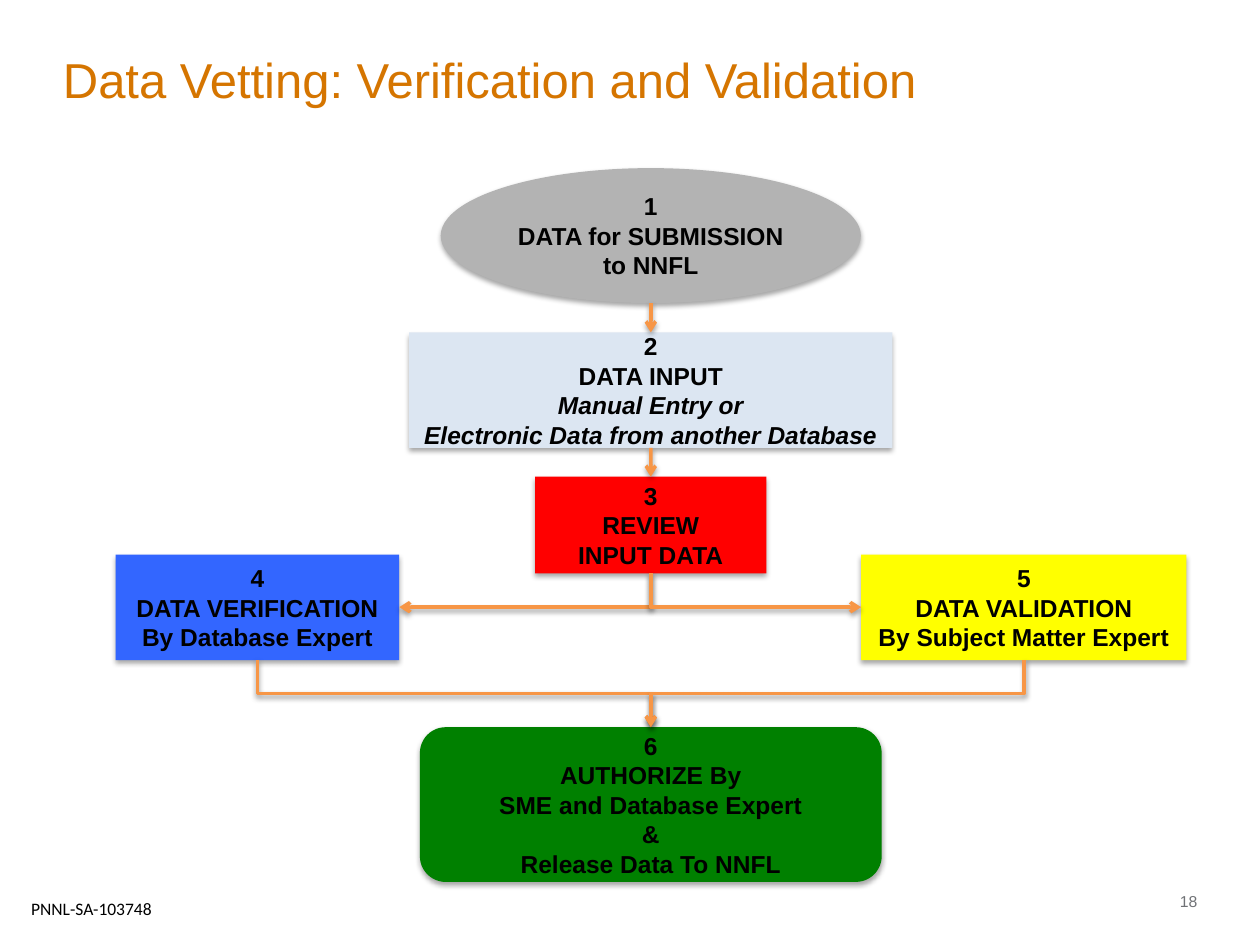
from lxml.etree import SubElement
from pptx import Presentation
from pptx.dml.color import RGBColor
from pptx.enum.shapes import MSO_CONNECTOR, MSO_SHAPE
from pptx.enum.text import MSO_ANCHOR, PP_ALIGN
from pptx.oxml.ns import qn
from pptx.util import Cm, Pt

AXIS = 13.12  # centre of the main column, in cm
TOP, LEFT, BOTTOM, RIGHT = range(4)


def color(hex_string):
    return RGBColor.from_string(hex_string)


def style_font(font, size, hex_string, name="Arial", bold=False, italic=False):
    font.name, font.size = name, Pt(size)
    font.bold, font.italic = bold, italic
    font.color.rgb = color(hex_string)


def add_shadow(shape, distance, opacity):
    properties = shape.element.spPr
    effects = properties.find(qn("a:effectLst"))
    if effects is None:
        effects = SubElement(properties, qn("a:effectLst"))
    shadow = SubElement(effects, qn("a:outerShdw"), blurRad=str(Pt(3.1)),
                        dist=str(Pt(distance)), dir="5400000", rotWithShape="0")
    black = SubElement(shadow, qn("a:srgbClr"), val="000000")
    SubElement(black, qn("a:alpha"), val=str(opacity * 1000))


def add_label(slide, text, left, top, width, height, size, hex_string,
              name="Arial", align=PP_ALIGN.LEFT, anchor=MSO_ANCHOR.TOP):
    shape = slide.shapes.add_textbox(Cm(left), Cm(top), Cm(width), Cm(height))
    frame = shape.text_frame
    frame.word_wrap = True
    frame.vertical_anchor = anchor
    frame.margin_left = frame.margin_right = 0
    frame.margin_top = frame.margin_bottom = 0
    paragraph = frame.paragraphs[0]
    paragraph.text = text
    paragraph.alignment = align
    style_font(paragraph.font, size, hex_string, name)


def add_step(slide, kind, center, top, width, height, fill, lines, italic_from=9):
    shape = slide.shapes.add_shape(kind, Cm(center - width / 2), Cm(top),
                                   Cm(width), Cm(height))
    shape.fill.solid()
    shape.fill.fore_color.rgb = color(fill)
    shape.line.fill.background()
    shape.shadow.inherit = False
    add_shadow(shape, 1.8, 35)
    frame = shape.text_frame
    frame.word_wrap = True
    frame.vertical_anchor = MSO_ANCHOR.MIDDLE
    for index, line in enumerate(lines):
        paragraph = frame.add_paragraph() if index else frame.paragraphs[0]
        paragraph.text = line
        paragraph.alignment = PP_ALIGN.CENTER
        style_font(paragraph.font, 14, "000000", bold=True, italic=index >= italic_from)
    return shape


def style_arrow(connector):
    connector.line.color.rgb = color("F79646")
    connector.line.width = Pt(2)
    line = connector.element.spPr.find(qn("a:ln"))
    SubElement(line, qn("a:tailEnd"), type="arrow")
    add_shadow(connector, 1.6, 38)


def add_straight_arrow(slide, x, start_y, end_y):
    connector = slide.shapes.add_connector(MSO_CONNECTOR.STRAIGHT, Cm(x), Cm(start_y),
                                           Cm(x), Cm(end_y))
    style_arrow(connector)
    return connector


def add_bent_arrow(slide, start, end, preset):
    """Leave start downwards: an elbow box turned a quarter about its middle."""
    (start_x, start_y), (end_x, end_y) = start, end
    middle_x, middle_y = (start_x + end_x) / 2, (start_y + end_y) / 2
    half_width, half_height = (end_y - start_y) / 2, abs(end_x - start_x) / 2
    rightward = end_x > start_x
    side = 1 if rightward else -1
    connector = slide.shapes.add_connector(
        MSO_CONNECTOR.ELBOW,
        Cm(middle_x + side * half_width), Cm(middle_y - half_height),
        Cm(middle_x - side * half_width), Cm(middle_y + half_height))
    properties = connector.element.spPr
    properties.find(qn("a:xfrm")).set("rot", "16200000" if rightward else "5400000")
    properties.find(qn("a:prstGeom")).set("prst", preset)
    style_arrow(connector)


def main():
    presentation = Presentation()
    presentation.slide_width, presentation.slide_height = Cm(25.4), Cm(19.05)
    slide = presentation.slides.add_slide(presentation.slide_layouts[6])

    # Title
    add_label(slide, "Data Vetting: Verification and Validation",
              1.27, 0.99, 18.42, 1.19, 28, "D57500")

    # Steps
    add_step(slide, MSO_SHAPE.OVAL, AXIS, 3.39, 8.47, 2.72, "B3B3B3",
             ["1", "DATA for SUBMISSION to NNFL"])
    data_input = add_step(slide, MSO_SHAPE.RECTANGLE, AXIS, 6.7, 9.74, 2.33, "DCE6F2",
                          ["2", "DATA INPUT", "Manual Entry or",
                           "Electronic Data from another Database"], italic_from=2)
    add_step(slide, MSO_SHAPE.ROUNDED_RECTANGLE, AXIS, 14.66, 9.31, 3.12, "008000",
             ["6", "AUTHORIZE By", "SME and Database Expert", "&",
              "Release Data To NNFL"])
    review = add_step(slide, MSO_SHAPE.RECTANGLE, AXIS, 9.61, 4.66, 1.95, "FF0000",
                      ["3", "REVIEW", "INPUT DATA"])
    add_step(slide, MSO_SHAPE.RECTANGLE, 20.64, 11.18, 6.56, 2.13, "FFFF00",
             ["5", "DATA VALIDATION", "By Subject Matter Expert"])
    add_step(slide, MSO_SHAPE.RECTANGLE, 5.19, 11.18, 5.72, 2.13, "3366FF",
             ["4", "DATA VERIFICATION", "By Database Expert"])

    # Straight arrows down the main column
    add_straight_arrow(slide, AXIS, 6.11, 6.7).end_connect(data_input, TOP)
    arrow = add_straight_arrow(slide, AXIS, 9.03, 9.61)
    arrow.begin_connect(data_input, BOTTOM)
    arrow.end_connect(review, TOP)

    # Review branches out to both experts, whose results meet at the approval
    for end_x in (8.05, 17.36):
        add_bent_arrow(slide, (AXIS, 11.56), (end_x, 12.24), "bentConnector2")
    for start_x in (5.19, 20.64):
        add_bent_arrow(slide, (start_x, 13.31), (AXIS, 14.66), "bentConnector3")

    # Footer
    add_label(slide, "18", 18.21, 17.65, 5.93, 1.02, 9, "707276",
              align=PP_ALIGN.RIGHT, anchor=MSO_ANCHOR.MIDDLE)
    add_label(slide, "PNNL-SA-103748", 0.63, 18.11, 2.6, 0.43, 10, "000000", "Calibri")

    presentation.save("out.pptx")


if __name__ == "__main__":
    main()
